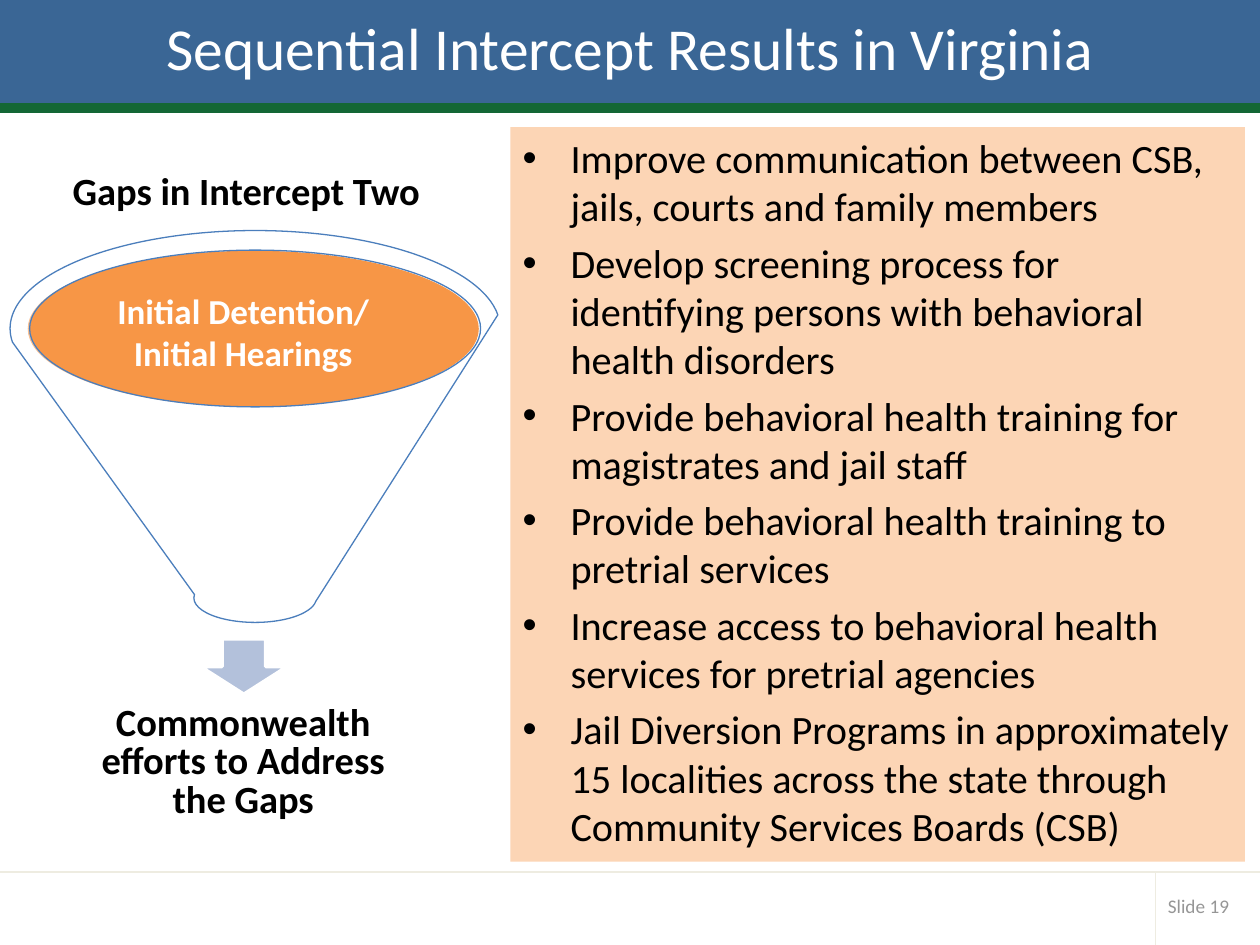
from dataclasses import dataclass

from lxml import etree
from pptx import Presentation
from pptx.dml.color import RGBColor
from pptx.enum.shapes import MSO_CONNECTOR, MSO_SHAPE
from pptx.enum.text import MSO_ANCHOR, PP_ALIGN
from pptx.oxml.ns import qn
from pptx.util import Inches, Pt

RECTANGLE = MSO_SHAPE.RECTANGLE
ELLIPSE = MSO_SHAPE.OVAL
FUNNEL = MSO_SHAPE.FUNNEL
DOWN_ARROW = MSO_SHAPE.DOWN_ARROW
STRAIGHT = MSO_CONNECTOR.STRAIGHT
TOP, MIDDLE = MSO_ANCHOR.TOP, MSO_ANCHOR.MIDDLE
LEFT, CENTER = PP_ALIGN.LEFT, PP_ALIGN.CENTER


@dataclass(frozen=True)
class Theme:
    font: str = "Calibri"
    blue: str = "3A6695"
    green: str = "136735"
    rule: str = "EEECE1"
    peach: str = "FCD5B5"
    orange: str = "F79646"
    arrow: str = "B3C1DB"
    outline: str = "4B7EBC"
    white: str = "FFFFFF"
    black: str = "000000"
    gray: str = "969696"
    title_size: float = 34
    body_size: float = 23
    heading_size: float = 22
    label_size: float = 20
    footer_size: float = 11


THEME = Theme()
SLIDE_WIDTH, SLIDE_HEIGHT = 10, 7.5
TITLE_HEIGHT = 0.83
FOOTER_TOP = 6.92
FOOTER_DIVIDER = 9.17
RECOMMENDATIONS = [
    "Improve communication between CSB, jails, courts and family members",
    "Develop screening process for identifying persons with behavioral health disorders",
    "Provide behavioral health training for magistrates and jail staff",
    "Provide behavioral health training to pretrial services",
    "Increase access to behavioral health services for pretrial agencies",
    "Jail Diversion Programs in approximately 15 localities across the state "
    "through Community Services Boards (CSB)",
]


def add_bullet(paragraph, indent):
    properties = paragraph._p.get_or_add_pPr()
    properties.set("marL", str(indent))
    properties.set("indent", str(-indent))
    etree.SubElement(properties, qn("a:buFont"), typeface="Arial")
    etree.SubElement(properties, qn("a:buChar"), char="•")


def write_text(frame, paragraphs, size, color, bold=False, align=LEFT, anchor=TOP,
               wrap=True, line_spacing=None, space_before=0, bullet_indent=None):
    frame.word_wrap = wrap
    frame.vertical_anchor = anchor
    for index, text in enumerate(paragraphs):
        paragraph = frame.add_paragraph() if index else frame.paragraphs[0]
        paragraph.text = text
        paragraph.alignment = align
        if line_spacing:
            paragraph.line_spacing = line_spacing
        if index and space_before:
            paragraph.space_before = Pt(space_before)
        if bullet_indent:
            add_bullet(paragraph, bullet_indent)
        for run in paragraph.runs:
            run.font.name = THEME.font
            run.font.size = Pt(size)
            run.font.bold = bold
            run.font.color.rgb = RGBColor.from_string(color)


class SlideBuilder:
    def __init__(self, slide, theme):
        self.slide = slide
        self.theme = theme

    def shape(self, kind, box, fill, line=None, line_width=1, opacity=None):
        shape = self.slide.shapes.add_shape(kind, *map(Inches, box))
        shape.shadow.inherit = False
        shape.fill.solid()
        shape.fill.fore_color.rgb = RGBColor.from_string(fill)
        if opacity is not None:
            color = shape.fill._xPr.find(qn("a:solidFill"))[0]
            etree.SubElement(color, qn("a:alpha"), val=str(opacity * 1000))
        if line:
            shape.line.color.rgb = RGBColor.from_string(line)
            shape.line.width = Pt(line_width)
        else:
            shape.line.fill.background()
        return shape

    def text(self, box, text, size, color, **text_format):
        text_box = self.slide.shapes.add_textbox(*map(Inches, box))
        write_text(text_box.text_frame, [text], size, color, **text_format)

    def bullet_panel(self, box, items):
        panel = self.shape(RECTANGLE, box, self.theme.peach)
        write_text(panel.text_frame, items, self.theme.body_size, self.theme.black,
                   space_before=self.theme.body_size * 0.2, bullet_indent=Inches(0.38))

    def rule(self, start, end):
        connector = self.slide.shapes.add_connector(STRAIGHT, *map(Inches, start + end))
        connector.line.color.rgb = RGBColor.from_string(self.theme.rule)
        connector.line.width = Pt(1)
        etree.SubElement(connector._element.spPr, qn("a:effectLst"))


def main():
    presentation = Presentation()
    presentation.slide_width = Inches(SLIDE_WIDTH)
    presentation.slide_height = Inches(SLIDE_HEIGHT)
    slide = presentation.slides.add_slide(presentation.slide_layouts[6])
    builder = SlideBuilder(slide, THEME)

    # Title band and footer
    title_box = (0, 0, SLIDE_WIDTH, TITLE_HEIGHT)
    builder.shape(RECTANGLE, title_box, THEME.blue, THEME.blue, 2)
    builder.shape(RECTANGLE, (0, TITLE_HEIGHT, SLIDE_WIDTH, 0.05),
                  THEME.green, THEME.green, 2)
    builder.rule((0, FOOTER_TOP), (SLIDE_WIDTH, FOOTER_TOP))
    builder.rule((FOOTER_DIVIDER, FOOTER_TOP), (FOOTER_DIVIDER, SLIDE_HEIGHT))
    builder.text((FOOTER_DIVIDER, 7.04, 0.74, 0.29), "Slide 19",
                 THEME.footer_size, THEME.gray, anchor=MIDDLE)
    builder.text(title_box, "Sequential Intercept Results in Virginia", THEME.title_size,
                 THEME.white, align=CENTER, anchor=MIDDLE, line_spacing=Pt(35))

    builder.bullet_panel((4.05, 1.01, 5.83, 5.83), RECOMMENDATIONS)

    # Funnel diagram
    builder.shape(DOWN_ARROW, (1.59, 5.07, 0.69, 0.44), THEME.arrow, THEME.white, 2)
    builder.shape(ELLIPSE, (0.22, 1.99, 3.58, 1.24), THEME.orange)
    builder.shape(FUNNEL, (0.08, 1.83, 3.89, 3.11), THEME.white, THEME.outline,
                  0.75, opacity=40)
    builder.text((0.46, 1.32, 2.99, 0.43), "Gaps in Intercept Two", THEME.heading_size,
                 THEME.black, bold=True, align=CENTER, wrap=False, line_spacing=0.9)
    builder.text((0.69, 5.55, 2.48, 1.03), "Commonwealth efforts to Address the Gaps",
                 THEME.heading_size, THEME.black, bold=True, align=CENTER,
                 line_spacing=Pt(22))
    builder.text((0.82, 2.25, 2.22, 0.77), "Initial Detention/\vInitial Hearings",
                 THEME.label_size, THEME.white, bold=True, align=CENTER, wrap=False)

    presentation.save("out.pptx")


if __name__ == "__main__":
    main()
